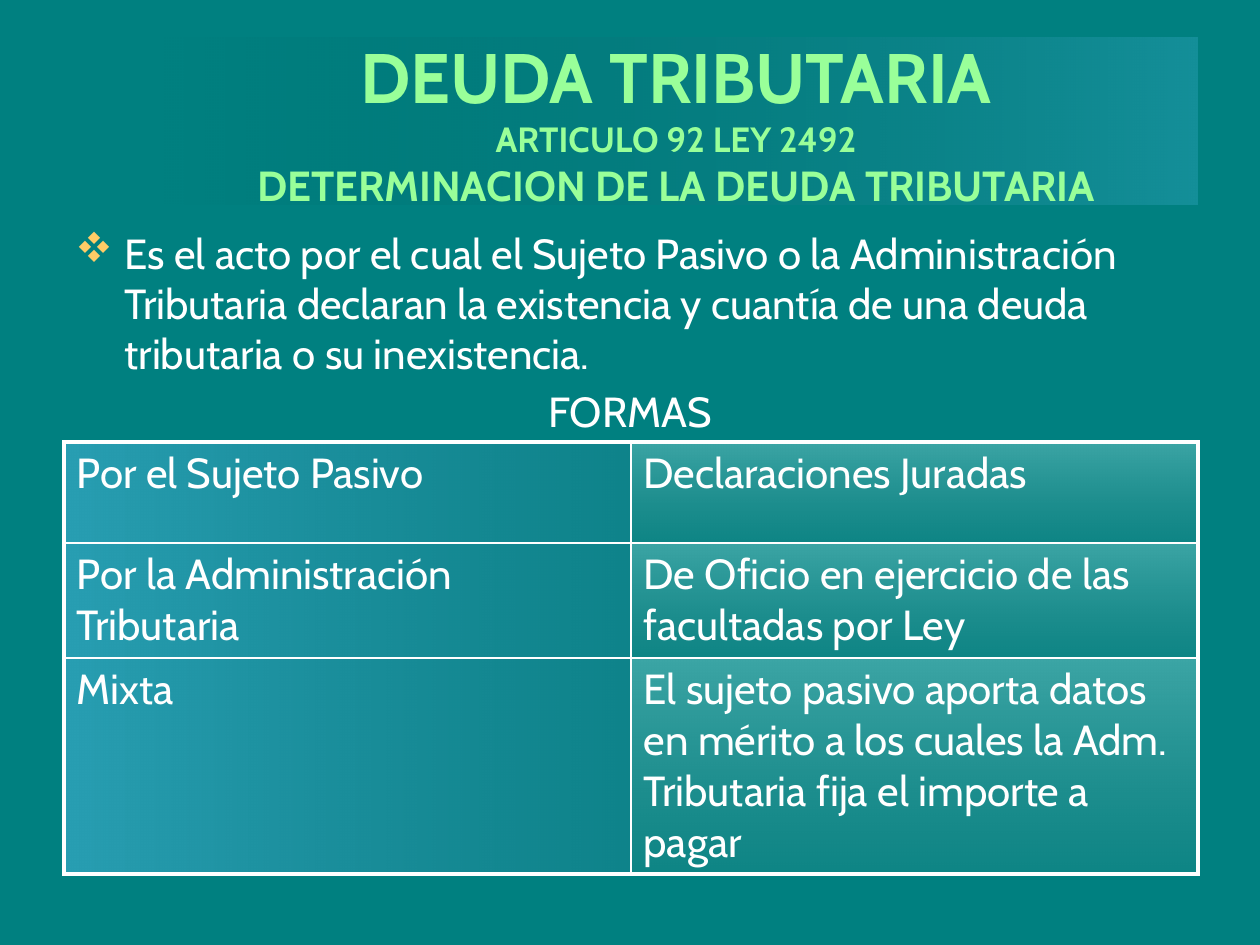
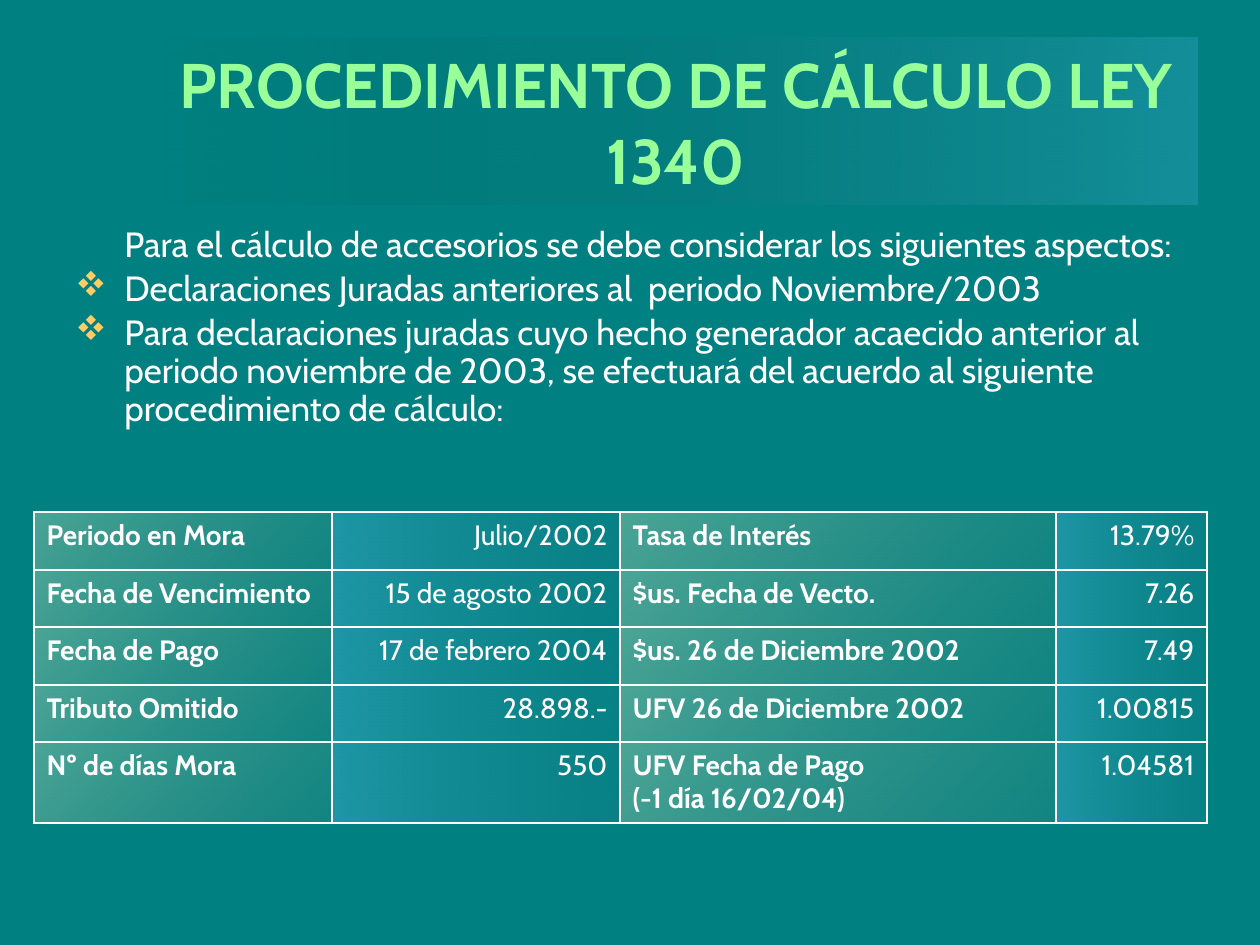
from itertools import product

from lxml.etree import SubElement
from pptx import Presentation
from pptx.dml.color import RGBColor
from pptx.enum.shapes import MSO_SHAPE as Shape
from pptx.enum.text import MSO_ANCHOR as Anchor, PP_ALIGN as Align
from pptx.oxml.ns import qn
from pptx.util import Pt

PX = 914400 / 126
SLIDE_SIZE = (1260, 945)
FONT = "Cabin"
BULLET_FONT, BULLET_DIAMOND = "Wingdings", "v"
TEAL, WHITE, MINT, AMBER = "008080", "FFFFFF", "99FF99", "FFCC66"
TITLE_BAND = (154, 38, 1044, 167)
BODY_LEFT, BODY_TOP, BODY_WIDTH = 63, 221, 1134
HANGING = 49
THIN, THICK = 1, 2.25

BAND_FADE = (0, ("000000", 0), ("66CCFF", 20))
BLUE_FADE = (0, ("66CCFF", 40), ("4992B6", 20))
AQUA_FADE = (90, ("CCFFFF", 30), ("92B6B6", 10))
CREAM_FADE = (45, ("FFFFCC", 30), ("B6B692", 10))
SOFT_BLUE_FADE = (0, ("66CCFF", 30), ("4992B6", 10))

LABEL = {"fade": CREAM_FADE, "bold": True, "align": Align.LEFT}
RATE_LABEL = {"fade": CREAM_FADE, "bold": True, "align": Align.JUSTIFY}
AMOUNT = {"fade": SOFT_BLUE_FADE, "bold": False, "align": Align.RIGHT}

SLIDES = [
    {
        "title": [("DEUDA TRIBUTARIA", 40), ("ARTICULO 92 LEY 2492", 20),
                  ("DETERMINACION DE LA DEUDA TRIBUTARIA", 24)],
        "body": {
            "height": 242, "size": 24, "line_spacing": None,
            "paragraphs": [
                ("bullet", "Es el acto por el cual el Sujeto Pasivo o la Administración Tributaria "
                           "declaran la existencia y cuantía de una deuda tributaria o su inexistencia."),
                ("centred", "FORMAS"),
            ],
        },
        "table": {
            "left": 64, "top": 442, "size": 24, "outline": THICK,
            "widths": [567, 567], "heights": [101, 115, 216],
            "columns": [{"fade": BLUE_FADE, "bold": False, "align": Align.LEFT},
                        {"fade": AQUA_FADE, "bold": False, "align": Align.LEFT}],
            "rows": [
                ("Por el Sujeto Pasivo", "Declaraciones Juradas"),
                ("Por la Administración Tributaria", "De Oficio en ejercicio de las facultadas por Ley"),
                ("Mixta", "El sujeto pasivo aporta datos en mérito a los cuales la Adm. "
                          "Tributaria fija el importe a pagar"),
            ],
        },
    },
    {
        "title": [("PROCEDIMIENTO DE CÁLCULO LEY 1340", 36)],
        "body": {
            "height": 272, "size": 20, "line_spacing": 0.9,
            "paragraphs": [
                ("plain", "Para el cálculo de accesorios se debe considerar los siguientes aspectos:"),
                ("bullet", "Declaraciones Juradas anteriores al  periodo Noviembre/2003"),
                ("bullet", "Para declaraciones juradas cuyo hecho generador acaecido anterior al periodo "
                           "noviembre de 2003, se efectuará del acuerdo al siguiente procedimiento de cálculo:"),
            ],
        },
        "table": {
            "left": 34, "top": 512, "size": 16, "outline": THIN,
            "widths": [298, 288, 436, 151], "heights": [58, 57, 58, 57, 81],
            "columns": [LABEL, AMOUNT, RATE_LABEL, AMOUNT],
            "rows": [
                ("Periodo en Mora", "Julio/2002", "Tasa de Interés", "13.79%"),
                ("Fecha de Vencimiento", "15 de agosto 2002", "$us. Fecha de Vecto.", "7.26"),
                ("Fecha de Pago", "17 de febrero 2004", "$us. 26 de Diciembre 2002", "7.49"),
                ("Tributo Omitido", "28.898.-", "UFV 26 de Diciembre 2002", "1.00815"),
                ("Nº de días Mora", "550", "UFV Fecha de Pago\n(-1 día 16/02/04)", "1.04581"),
            ],
        },
    },
]


def px(*lengths):
    return [round(length * PX) for length in lengths]


def rgb(colour):
    return RGBColor.from_string(colour)


def add_fade(properties, fade):
    angle, *stops = fade
    gradient = SubElement(properties, qn("a:gradFill"), rotWithShape="1")
    stop_list = SubElement(gradient, qn("a:gsLst"))
    for position, (colour, opacity) in zip((0, 100000), stops):
        stop = SubElement(stop_list, qn("a:gs"), pos=str(position))
        shade = SubElement(stop, qn("a:srgbClr"), val=colour)
        SubElement(shade, qn("a:alpha"), val=str(opacity * 1000))
    SubElement(gradient, qn("a:lin"), ang=str(angle * 60000), scaled="1")


def add_border(properties, side, width):
    line = SubElement(properties, qn(f"a:ln{side}"), w=str(Pt(width)))
    SubElement(SubElement(line, qn("a:solidFill")), qn("a:srgbClr"), val=WHITE)


def add_bullet(properties):
    properties.set("indent", str(-px(HANGING)[0]))
    SubElement(SubElement(properties, qn("a:buClr")), qn("a:srgbClr"), val=AMBER)
    SubElement(properties, qn("a:buFont"), typeface=BULLET_FONT, pitchFamily="2", charset="2")
    SubElement(properties, qn("a:buChar"), char=BULLET_DIAMOND)


def style_run(run, size, colour=WHITE, bold=False):
    run.font.name = FONT
    run.font.size = Pt(size)
    run.font.bold = bold
    run.font.color.rgb = rgb(colour)


def add_title(slide, lines):
    band = slide.shapes.add_shape(Shape.RECTANGLE, *px(*TITLE_BAND))
    add_fade(band._element.spPr, BAND_FADE)
    band.line.fill.background()
    band.shadow.inherit = False
    frame = band.text_frame
    frame.word_wrap = True
    frame.vertical_anchor = Anchor.MIDDLE
    heading = frame.paragraphs[0]
    heading.text = "\v".join(line for line, _ in lines)
    heading.alignment = Align.CENTER
    for run, (_, size) in zip(heading.runs, lines):
        style_run(run, size, MINT, True)


def add_body(slide, body):
    box = slide.shapes.add_textbox(*px(BODY_LEFT, BODY_TOP, BODY_WIDTH, body["height"]))
    frame = box.text_frame
    frame.word_wrap = True
    frame.text = "\n".join(text for _, text in body["paragraphs"])
    for index, (kind, _) in enumerate(body["paragraphs"]):
        paragraph = frame.paragraphs[index]
        paragraph.line_spacing = body["line_spacing"]
        if index:
            paragraph.space_before = Pt(body["size"] * 0.18)
        properties = paragraph._p.get_or_add_pPr()
        if kind == "centred":
            paragraph.alignment = Align.CENTER
        else:
            properties.set("marL", str(px(HANGING)[0]))
        if kind == "bullet":
            add_bullet(properties)
        style_run(paragraph.runs[0], body["size"])


def add_grid(slide, grid):
    widths, heights = grid["widths"], grid["heights"]
    place = px(grid["left"], grid["top"], sum(widths), sum(heights))
    table = slide.shapes.add_table(len(heights), len(widths), *place).table
    table.first_row = table.horz_banding = False
    for column, width in zip(table.columns, px(*widths)):
        column.width = width
    for row, height in zip(table.rows, px(*heights)):
        row.height = height
    last_row, last_column = len(heights) - 1, len(widths) - 1
    for r, c in product(range(len(heights)), range(len(widths))):
        cell, look = table.cell(r, c), grid["columns"][c]
        cell.text_frame.text = grid["rows"][r][c]
        for paragraph in cell.text_frame.paragraphs:
            paragraph.alignment = look["align"]
            style_run(paragraph.runs[0], grid["size"], bold=look["bold"])
        properties = cell._tc.get_or_add_tcPr()
        edges = {"L": c == 0, "R": c == last_column, "T": r == 0, "B": r == last_row}
        for side, is_outer in edges.items():
            add_border(properties, side, grid["outline"] if is_outer else THIN)
        add_fade(properties, look["fade"])


def main():
    deck = Presentation()
    deck.slide_width, deck.slide_height = px(*SLIDE_SIZE)
    for content in SLIDES:
        slide = deck.slides.add_slide(deck.slide_layouts[6])
        slide.background.fill.solid()
        slide.background.fill.fore_color.rgb = rgb(TEAL)
        add_title(slide, content["title"])
        add_body(slide, content["body"])
        add_grid(slide, content["table"])
    deck.save("out.pptx")


if __name__ == "__main__":
    main()
